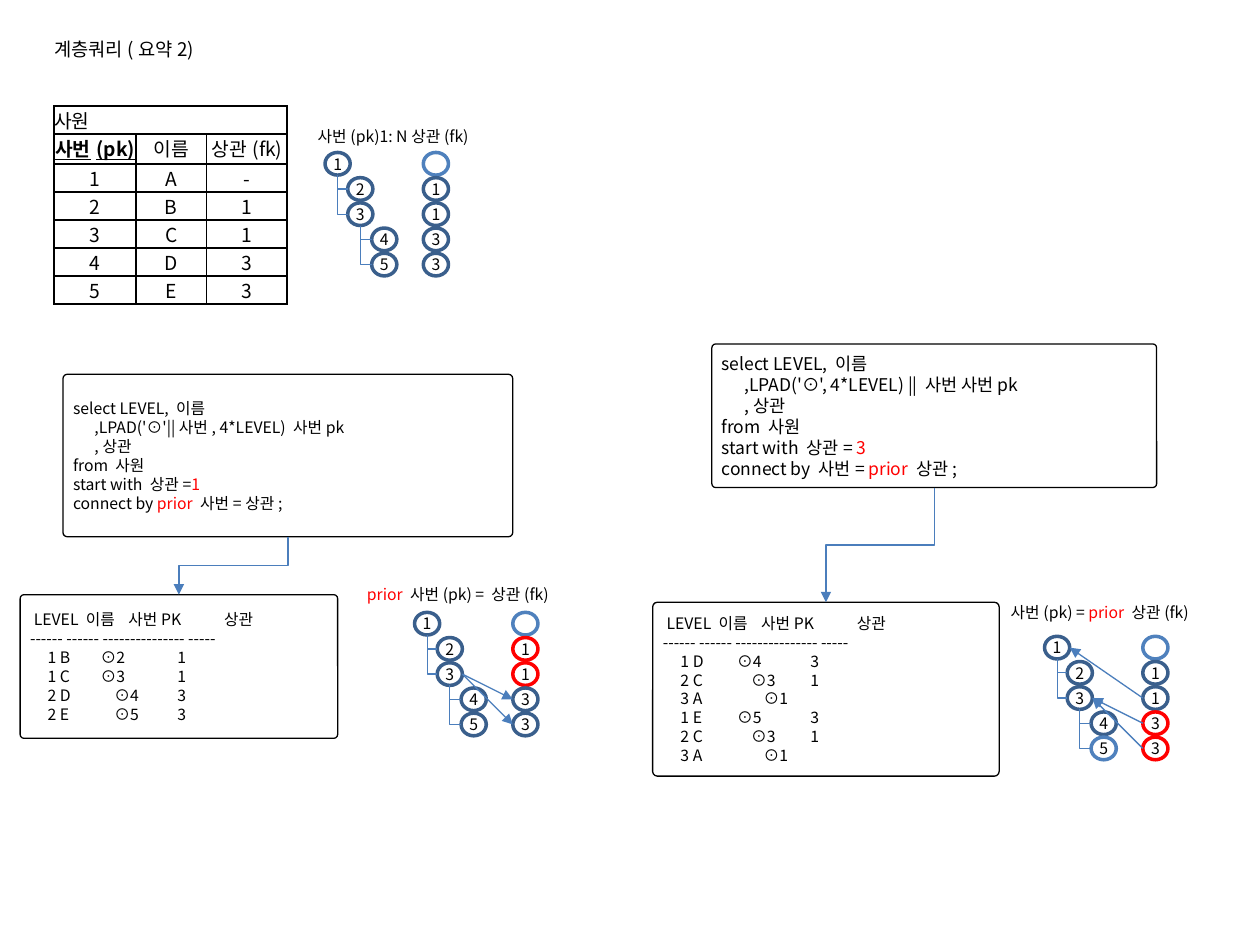
"""Build a slide that sums up hierarchical queries with tables, trees and SQL."""
from dataclasses import dataclass

from lxml import etree
from pptx import Presentation
from pptx import util as u
from pptx.dml.color import RGBColor
from pptx.enum import shapes, text
from pptx.oxml.ns import qn


@dataclass(frozen=True)
class Theme:
    font: str = "Noto Sans CJK KR"
    black: str = "000000"
    red: str = "FF0000"
    navy: str = "3A5F8C"
    blue: str = "4F81BD"
    wire: str = "4B7EBC"
    title: float = 10.7
    cell: float = 11
    query: float = 10
    small: float = 9


T = Theme()
LEFT, CENTER = text.PP_ALIGN.LEFT, text.PP_ALIGN.CENTER


def write(tf, lines, size=T.small, align=LEFT, inset=(0.07, 0.04),
          tabs=(), bold=False, spacing=None):
    """Fill a text frame, with ~marked~ parts in red and tab stops in inches."""
    tf.word_wrap = True
    tf.vertical_anchor = text.MSO_ANCHOR.MIDDLE
    tf.margin_left = tf.margin_right = u.Inches(inset[0])
    tf.margin_top = tf.margin_bottom = u.Inches(inset[1])
    for i, line in enumerate(lines):
        p = tf.add_paragraph() if i else tf.paragraphs[0]
        p.alignment = align
        if spacing:
            p.line_spacing = spacing
        line, stops = line if isinstance(line, tuple) else (line, tabs)
        if "\t" in line:
            tab_list = etree.SubElement(p._p.get_or_add_pPr(), qn("a:tabLst"))
            for stop in stops:
                etree.SubElement(tab_list, qn("a:tab"),
                                 pos=str(u.Inches(stop)), algn="l")
        for j, part in enumerate(line.split("~")):
            if not part:
                continue
            r = p.add_run()
            r.text = part
            r.font.name = T.font
            r.font.size = u.Pt(size)
            r.font.bold = r.font.underline = bold
            r.font.color.rgb = RGBColor.from_string(T.red if j % 2 else T.black)
            etree.SubElement(r.font._element, qn("a:ea"), typeface=T.font)


class Deck:
    """Hold the presentation and draw styled elements on its current slide."""

    def __init__(self):
        self.prs = Presentation()
        self.prs.slide_width, self.prs.slide_height = u.Inches(10), u.Inches(7.5)
        self.s = self.prs.slides.add_slide(self.prs.slide_layouts[5])

    def title(self, label, *at):
        sp = self.s.shapes.title
        sp.left, sp.top, sp.width, sp.height = map(u.Inches, at)
        write(sp.text_frame, [label], size=T.title, spacing=0.7)

    def shape(self, kind, at, color=None, width=0.75):
        sp = self.s.shapes.add_shape(kind, *map(u.Inches, at))
        sp.shadow.inherit = False
        sp.fill.background()
        if color:
            sp.line.color.rgb = RGBColor.from_string(color)
            sp.line.width = u.Pt(width)
        else:
            sp.line.fill.background()
        return sp

    def box(self, lines, *at, color=T.black, **fmt):
        sp = self.shape(shapes.MSO_SHAPE.ROUNDED_RECTANGLE, at, color)
        sp.adjustments[0] = 0.027
        write(sp.text_frame, lines, **fmt)
        return sp

    def node(self, label, x, y, color):
        sp = self.shape(shapes.MSO_SHAPE.OVAL, (x, y, 0.2, 0.18), color, 2)
        if label:
            write(sp.text_frame, [label], align=CENTER, inset=(0, 0))
        return sp

    def connector(self, start, end, kind=shapes.MSO_CONNECTOR.STRAIGHT, head=True):
        c = self.s.shapes.add_connector(kind, *start, *end)
        c.line.color.rgb = RGBColor.from_string(T.wire)
        c.line.width = u.Pt(0.75)
        sp_pr = c.element.spPr
        if head:
            etree.SubElement(sp_pr.find(qn("a:ln")), qn("a:tailEnd"), type="triangle")
        etree.SubElement(sp_pr, qn("a:effectLst"))
        return c

    def elbow(self, start, end, rot, head=True):
        """Draw an elbow that leaves vertically, as a box turned by rot degrees."""
        c = self.connector(start, end, shapes.MSO_CONNECTOR.ELBOW, head)
        self.turn(c, start, end, rot)
        return c

    def turn(self, c, start, end, rot):
        (x1, y1), (x2, y2) = start, end
        w, h = abs(y2 - y1), abs(x2 - x1)
        c.left, c.top = (x1 + x2 - w) // 2, (y1 + y2 - h) // 2
        c.width, c.height = w, h
        xfrm = c.element.spPr.find(qn("a:xfrm"))
        xfrm.attrib.pop("flipH", None)
        xfrm.set("rot", str(rot * 60000))

    def flow(self, top, bottom):
        """Join the bottom of one box to the top of the next with an arrow."""
        start = (top.left + top.width // 2, top.top + top.height)
        end = (bottom.left + bottom.width // 2, bottom.top)
        c = self.elbow(start, end, 90)
        c.begin_connect(top, 2)
        c.end_connect(bottom, 0)
        self.turn(c, start, end, 90)

    def branch(self, parent, child):
        start = (parent.left + parent.width // 2, parent.top + parent.height)
        end = (child.left, child.top + child.height // 2)
        c = self.elbow(start, end, 270, head=False)
        c.element.spPr.find(qn("a:xfrm")).set("flipH", "1")
        c.element.spPr.find(qn("a:prstGeom")).set("prst", "bentConnector2")

    def tree(self, x, y, red=(), blue=()):
        """Draw the employee tree and the manager column; return both node lists."""
        staff, managers = [], []
        for i, (dx, boss) in enumerate(zip((0, 0.18, 0.18, 0.37, 0.37),
                                           ("", "1", "1", "3", "3"))):
            row, key = y + 0.2 * i, i + 1
            staff.append(self.node(str(key), x + dx, row,
                                   T.blue if key in blue else T.navy))
            color = T.red if key in red else T.navy if boss else T.blue
            managers.append(self.node(boss, x + 0.78, row, color))
            if boss:
                self.branch(staff[int(boss) - 1], staff[i])
        return staff, managers

    def table(self, rows, at, widths, heights):
        tbl = self.s.shapes.add_table(len(rows), len(widths), *map(u.Inches, at)).table
        tbl.first_row = tbl.horz_banding = False
        for col, w in zip(tbl.columns, widths):
            col.width = u.Inches(w)
        for i, (row, values) in enumerate(zip(tbl.rows, rows)):
            row.height = u.Inches(heights[i])
            for j, cell in enumerate(row.cells):
                cell.margin_left = cell.margin_right = 0
                cell.margin_top = cell.margin_bottom = 0
                if j < len(values):
                    write(cell.text_frame, [values[j]], size=T.cell, inset=(0, 0),
                          align=CENTER if i else LEFT, bold=(i, j) == (1, 0))
                tc_pr = cell._tc.get_or_add_tcPr()
                for side in ("lnL", "lnR", "lnT", "lnB"):
                    ln = etree.SubElement(tc_pr, qn(f"a:{side}"), w=str(u.Pt(1)))
                    fill = etree.SubElement(ln, qn("a:solidFill"))
                    etree.SubElement(fill, qn("a:srgbClr"), val=T.black)
                cell.fill.background()
        tbl.cell(0, 0).merge(tbl.cell(0, len(widths) - 1))


def side(sp, right):
    """Return the middle of a shape's right or left side."""
    return sp.left + (sp.width if right else 0), sp.top + sp.height // 2


def query(lpad, start, connect):
    return ["select LEVEL, 이름", f"\t,LPAD({lpad} 사번pk", "\t,상관",
            "from 사원", f"start with 상관={start}", f"connect by {connect};"]


def result(rows):
    head = [("\tLEVEL 이름\t사번PK\t상관", (0.03, 0.78, 1.54)),
            "------ ------ --------------- -----"]
    return head + [("\t" + "\t".join(cells), (0.14, mark, 1.17))
                   for mark, *cells in rows]


def main():
    d = Deck()
    d.title("계층쿼리(요약2)", 0.36, 0.31, 2.03, 0.21)
    d.table([["사원"], ["사번(pk)", "이름", "상관(fk)"], ["1", "A", "-"],
             ["2", "B", "1"], ["3", "C", "1"], ["4", "D", "3"], ["5", "E", "3"]],
            (0.43, 0.84, 1.85, 1.26), (0.65, 0.56, 0.64), [0.17, 0.24] + [0.17] * 5)
    d.box(["사번(pk)1: N상관(fk)"], 2.45, 0.94, 1.4, 0.28, color=None)
    d.tree(2.58, 1.21)

    down_query = d.box(query("'⊙'||사번, 4*LEVEL)", "~1~", "~prior ~사번=상관"),
                       0.5, 2.97, 3.57, 1.29, tabs=(0.17,))
    down_result = d.box(result([(0.56, "1 B", "⊙2", "1"), (0.56, "1 C", "⊙3", "1"),
                                (0.67, "2 D", "⊙4", "3"), (0.67, "2 E", "⊙5", "3")]),
                        0.16, 4.72, 2.52, 1.14)
    d.flow(down_query, down_result)
    d.box(["~prior ~사번(pk) = 상관(fk)"], 2.84, 4.58, 1.67, 0.28, color=None)
    staff, managers = d.tree(3.29, 4.86, red=(2, 3))
    for manager in managers[3:]:
        d.connector(side(staff[2], True), side(manager, False))

    up_query = d.box(query("'⊙', 4*LEVEL) || 사번", " ~3~", "사번= ~prior ~상관"),
                     5.65, 2.73, 3.53, 1.14, size=T.query, tabs=(0.18,))
    climb = [(0.7, "2 C", "⊙3", "1"), (0.8, "3 A", "⊙1")]
    up_result = d.box(result([(0.59, "1 D", "⊙4", "3"), *climb,
                              (0.59, "1 E", "⊙5", "3"), *climb]),
                      5.18, 4.78, 2.75, 1.38)
    d.flow(up_query, up_result)
    d.box(["사번(pk) = ~prior ~상관(fk)"], 7.95, 4.72, 1.67, 0.28, color=None)
    staff, managers = d.tree(8.29, 5.05, red=(4, 5), blue=(5,))
    for child, boss in ((4, 2), (2, 0), (3, 2)):
        d.connector(side(managers[child], False), side(staff[boss], True))
    d.prs.save("out.pptx")


if __name__ == "__main__":
    main()
